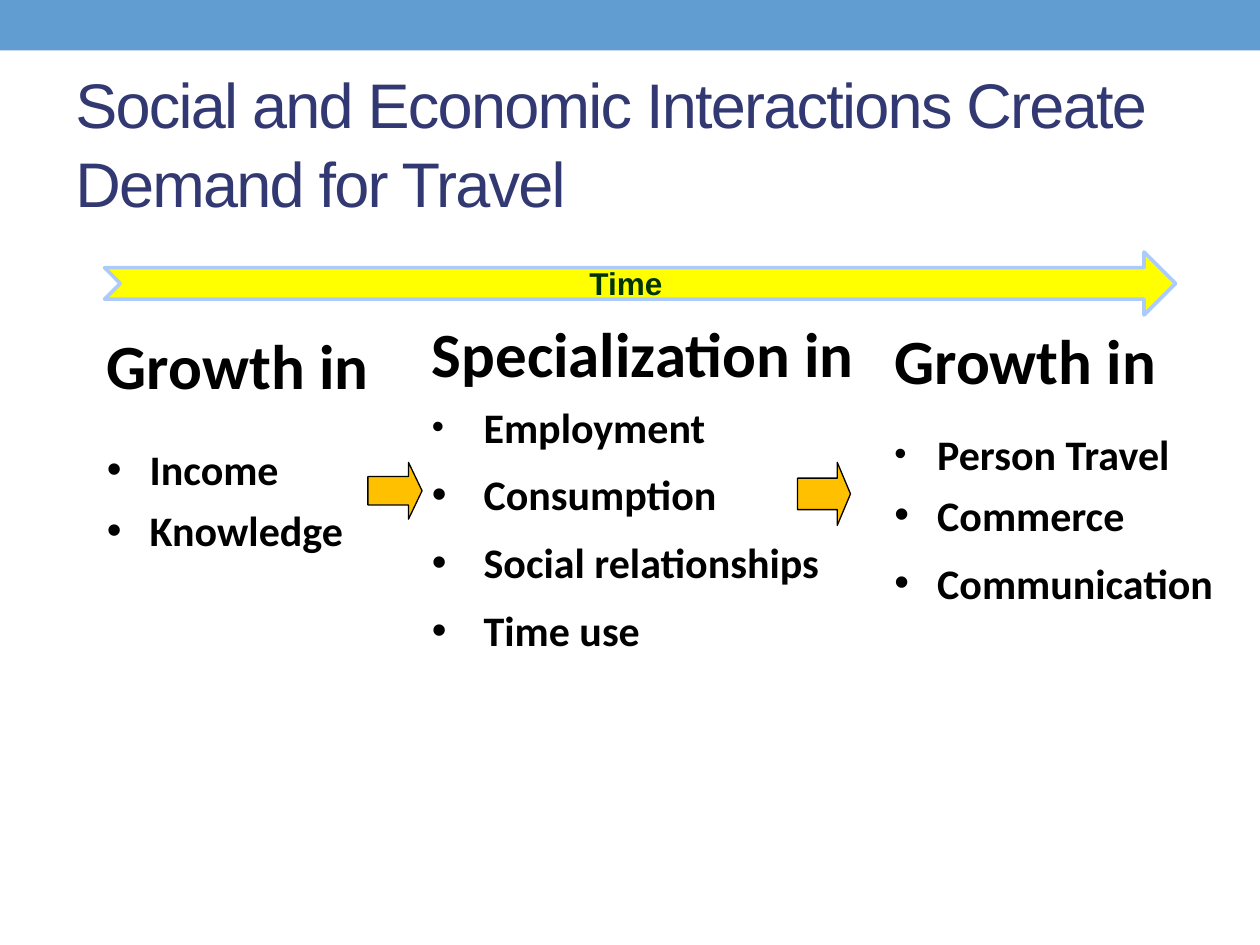
import pptx
import pptx.dml.color
import pptx.enum.shapes
import pptx.enum.text
import pptx.oxml.ns
import pptx.util
from lxml import etree

Inches = pptx.util.Inches
Pt = pptx.util.Pt
SHAPES = pptx.enum.shapes.MSO_SHAPE


def rgb(color):
    return pptx.dml.color.RGBColor.from_string(color)


def add_run(p, text, size, color, font="Calibri", bold=True):
    r = p.add_run()
    r.text = text
    r.font.size = Pt(size)
    r.font.name = font
    r.font.bold = bold
    r.font.color.rgb = rgb(color)
    return r


def set_bullet(p, indent, percent):
    """Give the paragraph a hanging bullet, sized in percent of its text."""
    pPr = p._p.get_or_add_pPr()
    pPr.set("marL", str(Inches(indent)))
    pPr.set("indent", str(-Inches(indent)))
    for tag, attrs in (
        ("a:buSzPct", {"val": str(percent * 1000)}),
        ("a:buFont", {"typeface": "Arial"}),
        ("a:buChar", {"char": "•"}),
    ):
        etree.SubElement(pPr, pptx.oxml.ns.qn(tag), attrs)


def add_text_box(slide, box):
    tf = slide.shapes.add_textbox(*map(Inches, box)).text_frame
    tf.word_wrap = True
    return tf


def add_block(slide, kind, box, fill, line=None, line_width=0.75):
    sp = slide.shapes.add_shape(kind, *map(Inches, box))
    sp.shadow.inherit = False
    sp.fill.solid()
    sp.fill.fore_color.rgb = rgb(fill)
    if line:
        sp.line.color.rgb = rgb(line)
        sp.line.width = Pt(line_width)
    else:
        sp.line.fill.background()
    return sp


def add_title(slide, box, text):
    tf = add_text_box(slide, box)
    tf.vertical_anchor = pptx.enum.text.MSO_ANCHOR.MIDDLE
    p = tf.paragraphs[0]
    p.line_spacing = 1.05
    r = add_run(p, text, 36, "323872", "Arial", False)
    r._r.get_or_add_rPr().set("spc", "-100")


def add_timeline(slide, box, label):
    left, top, width, height = box
    add_block(slide, SHAPES.NOTCHED_RIGHT_ARROW, box, "FFFF00", "ACCBF9", 2.08)
    tf = add_text_box(slide, (left + 3.75, top + 0.05, 0.92, height - 0.1))
    add_run(tf.paragraphs[0], label, 18, "003300", "Arial")


def add_column(slide, box, heading, items, gap, first_gap, indent, first_bullet):
    """Heading followed by bullets; the first bullet has its own size and gap."""
    tf = add_text_box(slide, box)
    p = tf.paragraphs[0]
    p.space_after = Pt(gap)
    add_run(p, heading, 36, "000000")
    for i, item in enumerate(items):
        p = tf.add_paragraph()
        p.space_after = Pt(10 if i else first_gap)
        set_bullet(p, indent, 100 if i else first_bullet)
        add_run(p, item, 24, "000000")


def add_step_arrow(slide, box):
    sp = add_block(slide, SHAPES.RIGHT_ARROW, box, "FFC000", "000000")
    sp.adjustments[1] = 0.25


def main():
    prs = pptx.Presentation()
    prs.slide_width, prs.slide_height = Inches(10), Inches(7.5)
    slide = prs.slides.add_slide(prs.slide_layouts[6])

    add_block(slide, SHAPES.RECTANGLE, (0, 0, 10, 0.4), "629DD1")
    add_column(slide, (0.75, 2.54, 2.5, 2.08), "Growth in",
               ["Income", "Knowledge"], 24, 6, 0.34, 100)
    add_column(slide, (3.33, 2.45, 3.75, 3.05), "Specialization in",
               ["Employment", "Consumption", "Social relationships", "Time use"],
               6, 10, 0.41, 83)
    add_column(slide, (7, 2.5, 3, 2.08), "Growth in",
               ["Person Travel", "Commerce", "Communication"], 18, 6, 0.34, 83)
    add_step_arrow(slide, (2.92, 3.67, 0.43, 0.45))
    add_step_arrow(slide, (6.33, 3.67, 0.42, 0.5))
    add_timeline(slide, (0.83, 2, 8.5, 0.5), "Time")
    add_title(slide, (0.5, 0.58, 9, 1.08),
              "Social and Economic Interactions Create Demand for Travel")

    prs.save("out.pptx")


if __name__ == "__main__":
    main()
